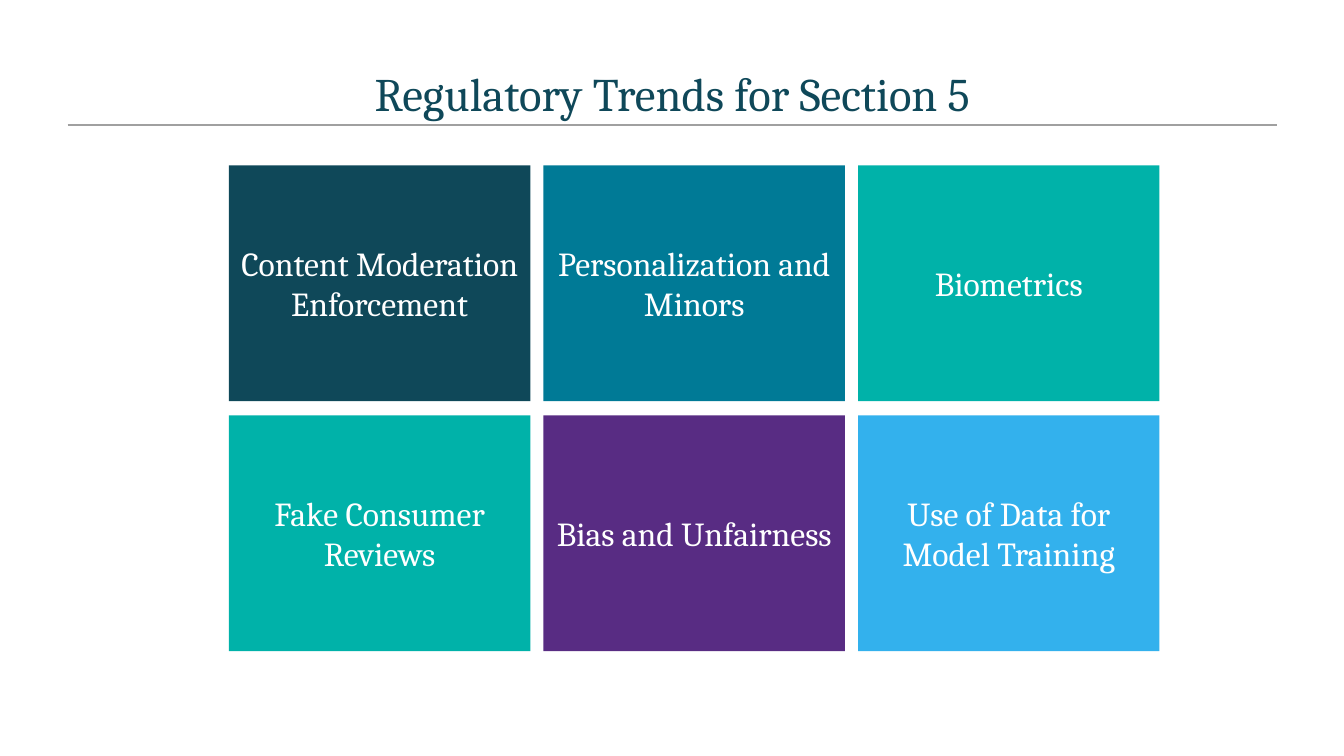
from dataclasses import dataclass

from pptx import Presentation
from pptx.dml.color import RGBColor
from pptx.enum.shapes import MSO_CONNECTOR as Conn, MSO_SHAPE as Kind
from pptx.enum.text import MSO_ANCHOR as Anchor, PP_ALIGN as Align
from pptx.oxml.ns import qn
from pptx.slide import Slide
from pptx.text.text import TextFrame
from pptx.util import Pt
from lxml.etree import SubElement

SCALE = 9144  # EMU per px, 100 px to the inch
FONT = "Cambria"

NAVY = RGBColor(0x0F, 0x48, 0x59)
BLUE = RGBColor(0x00, 0x7A, 0x96)
TEAL = RGBColor(0x00, 0xB2, 0xA9)
PLUM = RGBColor(0x58, 0x2C, 0x83)
SKY = RGBColor(0x33, 0xB1, 0xED)
GRAY = RGBColor(0xA0, 0xA0, 0xA0)
WHITE = RGBColor(0xFF, 0xFF, 0xFF)

# Tile grid
LEFT, TOP = 227, 164
WIDTH, HEIGHT = 299, 234
COLS, STEP_X, STEP_Y = 3, 312, 248


@dataclass
class Tile:
    text: str
    fill: RGBColor


TILES = [
    Tile("Content Moderation Enforcement", NAVY),
    Tile("Personalization and Minors", BLUE),
    Tile("Biometrics", TEAL),
    Tile("Fake Consumer Reviews", TEAL),
    Tile("Bias and Unfairness", PLUM),
    Tile("Use of Data for Model Training", SKY),
]


def px(num: int) -> int:
    return num * SCALE


def write(frame: TextFrame, text: str, *, size: float, color: RGBColor,
          anchor: Anchor = Anchor.MIDDLE) -> None:
    frame.word_wrap = True
    frame.vertical_anchor = anchor
    para = frame.paragraphs[0]
    para.alignment = Align.CENTER
    run = para.add_run()
    run.text = text
    run.font.name = FONT
    run.font.size = Pt(size)
    run.font.color.rgb = color


def add_rule(slide: Slide) -> None:
    rule = slide.shapes.add_connector(
        Conn.STRAIGHT, px(67), px(124), px(1267), px(124))
    rule.line.color.rgb = GRAY
    rule.line.width = Pt(1)
    SubElement(rule.element.spPr, qn("a:effectLst"))


def add_title(slide: Slide, text: str) -> None:
    title = slide.shapes.title
    title.left, title.top = px(67), px(58)
    title.width, title.height = px(1200), px(67)
    write(title.text_frame, text, size=33.3, color=NAVY, anchor=Anchor.BOTTOM)


def add_tile(slide: Slide, tile: Tile, row: int, col: int) -> None:
    box = slide.shapes.add_shape(
        Kind.RECTANGLE, px(LEFT + col * STEP_X), px(TOP + row * STEP_Y),
        px(WIDTH), px(HEIGHT))
    box.shadow.inherit = False
    box.fill.solid()
    box.fill.fore_color.rgb = tile.fill
    box.line.fill.background()
    write(box.text_frame, tile.text, size=24, color=WHITE)


def main() -> None:
    deck = Presentation()
    deck.slide_width, deck.slide_height = px(1333), px(750)
    slide = deck.slides.add_slide(deck.slide_layouts.get_by_name("Title Only"))

    # Heading with its rule
    add_rule(slide)
    add_title(slide, "Regulatory Trends for Section 5")

    # Trends, row by row
    for num, tile in enumerate(TILES):
        add_tile(slide, tile, *divmod(num, COLS))

    deck.save("out.pptx")


if __name__ == "__main__":
    main()
